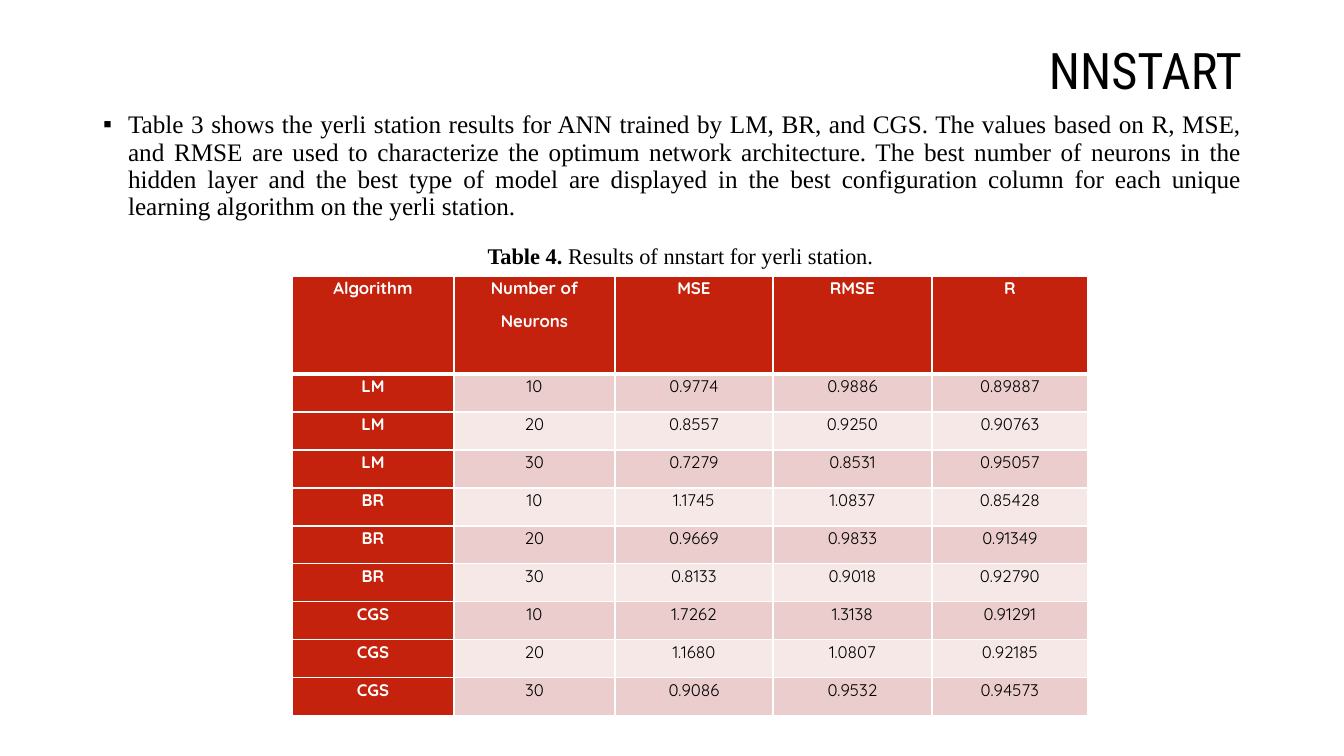
from lxml import etree
from pptx import Presentation
from pptx import util as u
from pptx.dml.color import RGBColor
from pptx.enum import text
from pptx.oxml import ns

PX = 12192000 / 1344
BLACK = RGBColor(0x00, 0x00, 0x00)
WHITE = RGBColor(0xFF, 0xFF, 0xFF)
RED = RGBColor(0xC4, 0x22, 0x0D)
PINK = RGBColor(0xEA, 0xCD, 0xCC)
PALE_PINK = RGBColor(0xF5, 0xE8, 0xE7)

FINDINGS = (
    "Table 3 shows the yerli station results for ANN trained by LM, BR, and CGS. "
    "The values based on R, MSE, and RMSE are used to characterize the optimum "
    "network architecture. The best number of neurons in the hidden layer and the "
    "best type of model are displayed in the best configuration column for each "
    "unique learning algorithm on the yerli station."
)
HEADINGS = ["Algorithm", "Number of\nNeurons", "MSE", "RMSE", "R"]
RESULTS = [
    ["LM", "10", "0.9774", "0.9886", "0.89887"],
    ["LM", "20", "0.8557", "0.9250", "0.90763"],
    ["LM", "30", "0.7279", "0.8531", "0.95057"],
    ["BR", "10", "1.1745", "1.0837", "0.85428"],
    ["BR", "20", "0.9669", "0.9833", "0.91349"],
    ["BR", "30", "0.8133", "0.9018", "0.92790"],
    ["CGS", "10", "1.7262", "1.3138", "0.91291"],
    ["CGS", "20", "1.1680", "1.0807", "0.92185"],
    ["CGS", "30", "0.9086", "0.9532", "0.94573"],
]
COLUMN_WIDTHS = [162, 161, 158, 159, 156]
HEADER_HEIGHT, ROW_HEIGHT = 98, 38


def px(length):
    return u.Emu(round(length * PX))


def place(shape, box):
    shape.left, shape.top, shape.width, shape.height = map(px, box)


def style(font, name, size, color=BLACK, bold=False):
    font.name, font.size, font.bold = name, u.Pt(size), bold
    font.color.rgb = color


def set_bullet(paragraph, mark=None, margin=0, indent=0):
    props = paragraph._p.get_or_add_pPr()
    props.set("marL", str(px(margin)))
    props.set("indent", str(px(indent)))
    if mark:
        etree.SubElement(props, ns.qn("a:buChar")).set("char", mark)
    else:
        etree.SubElement(props, ns.qn("a:buNone"))


def add_title(slide, box):
    title = slide.shapes.title
    place(title, box)
    frame = title.text_frame
    frame.text = "NNSTART"
    frame.auto_size = text.MSO_AUTO_SIZE.NONE
    frame.vertical_anchor = text.MSO_ANCHOR.MIDDLE
    heading = frame.paragraphs[0]
    heading.alignment = text.PP_ALIGN.RIGHT
    heading.line_spacing = 0.9
    style(heading.runs[0].font, "Roboto Condensed", 36)


def add_body(slide, box):
    body = slide.placeholders[1]
    place(body, box)
    frame = body.text_frame
    frame.auto_size = text.MSO_AUTO_SIZE.NONE

    # Findings bullet
    findings = frame.paragraphs[0]
    findings.text = FINDINGS
    set_bullet(findings, "▪", 25, -25)
    findings.alignment = text.PP_ALIGN.JUSTIFY
    findings.space_before = u.Pt(0)
    style(findings.runs[0].font, "Times New Roman", 18)

    # Table caption
    caption = frame.add_paragraph()
    set_bullet(caption, margin=16)
    caption.alignment = text.PP_ALIGN.CENTER
    caption.space_before = u.Pt(17)
    for words, bold in [("Table 4. ", True), ("Results of nnstart for yerli station.", False)]:
        run = caption.add_run()
        run.text = words
        style(run.font, "Times New Roman", 16, bold=bold)

    for paragraph in frame.paragraphs:
        paragraph.line_spacing = 0.9


def set_borders(cell, widths):
    props = cell._tc.get_or_add_tcPr()
    for side, width in widths.items():
        line = etree.SubElement(props, ns.qn(f"a:ln{side}"), w=str(u.Pt(width)))
        fill = etree.SubElement(line, ns.qn("a:solidFill"))
        etree.SubElement(fill, ns.qn("a:srgbClr"), val=str(WHITE))


def fill_cell(cell, value, row, column):
    emphasized = row == 0 or column == 0
    set_borders(cell, {"L": 1, "R": 1, "T": 3 if row == 1 else 1, "B": 3 if row == 0 else 1})
    cell.fill.solid()
    cell.fill.fore_color.rgb = RED if emphasized else (PINK if row % 2 else PALE_PINK)
    cell.margin_left = cell.margin_right = px(7)
    cell.margin_top = cell.margin_bottom = 0
    cell.text_frame.text = value
    for paragraph in cell.text_frame.paragraphs:
        paragraph.alignment = text.PP_ALIGN.CENTER
        paragraph.line_spacing = 1.07
        paragraph.space_after = u.Pt(8)
        style(paragraph.runs[0].font, "Quicksand", 12, WHITE if emphasized else BLACK, emphasized)


def add_results(slide, left, top):
    rows = [HEADINGS] + RESULTS
    heights = [HEADER_HEIGHT] + [ROW_HEIGHT] * len(RESULTS)
    box = map(px, (left, top, sum(COLUMN_WIDTHS), sum(heights)))
    results = slide.shapes.add_table(len(rows), len(HEADINGS), *box).table
    for column, width in zip(results.columns, COLUMN_WIDTHS):
        column.width = px(width)
    for r, (values, height) in enumerate(zip(rows, heights)):
        results.rows[r].height = px(height)
        for c, value in enumerate(values):
            fill_cell(results.cell(r, c), value, r, c)


def main():
    deck = Presentation()
    deck.slide_width, deck.slide_height = px(1344), px(756)
    slide = deck.slides.add_slide(deck.slide_layouts[1])
    add_title(slide, (93, 40, 1159, 67))
    add_body(slide, (93, 107, 1159, 627))
    add_results(slide, 292, 276)
    deck.save("out.pptx")


if __name__ == "__main__":
    main()
